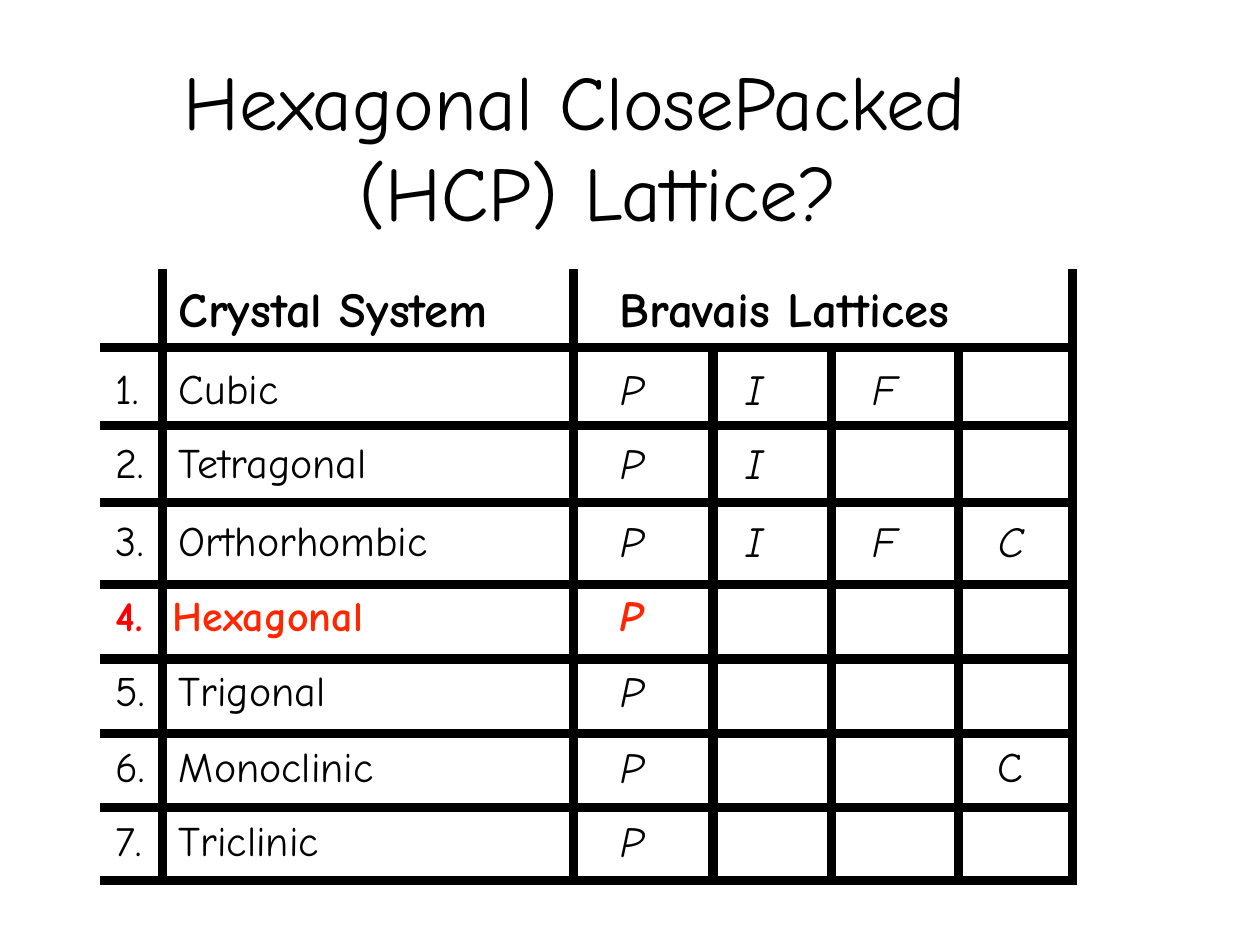
from lxml import etree
from pptx import Presentation
from pptx.dml.color import RGBColor
from pptx.oxml.ns import qn
from pptx.util import Inches, Pt

BLACK = RGBColor(0x00, 0x00, 0x00)
RED = RGBColor(0xFF, 0x00, 0x00)
ORANGE_RED = RGBColor(0xFF, 0x26, 0x00)
FONT = "Comic Neue"

COLUMN_WIDTHS = [0.49, 3.26, 1.11, 0.94, 1.01, 0.9]
ROW_HEIGHTS = [0.62, 0.62, 0.61, 0.65, 0.59, 0.59, 0.59, 0.58]
TOP_MARGINS = [0.11, 0.15, 0.12, 0.13, 0.07, 0.08, 0.09, 0.09]
TEXT_INDENTS = [0.12, 0.13, 0.37, 0.26, 0.32, 0.31]
LATTICE_COLUMNS = {"P": 2, "I": 3, "F": 4, "C": 5}
CRYSTAL_SYSTEMS = [
    ("Cubic", "PIF"),
    ("Tetragonal", "PI"),
    ("Orthorhombic", "PIFC"),
    ("Hexagonal", "P"),
    ("Trigonal", "P"),
    ("Monoclinic", "PC"),
    ("Triclinic", "P"),
]


def add_run(paragraph, text, size, color=BLACK, bold=False, italic=False):
    run = paragraph.add_run()
    run.text = text
    run.font.name = FONT
    run.font.size = Pt(size)
    run.font.bold = bold
    run.font.italic = italic
    run.font.color.rgb = color


def add_border(cell, side):
    """Draw a 6 pt black line on one side (L, R, T or B) of a cell."""
    properties = cell._tc.get_or_add_tcPr()
    line = etree.SubElement(properties, qn(f"a:ln{side}"), w=str(Pt(6)))
    fill = etree.SubElement(line, qn("a:solidFill"))
    etree.SubElement(fill, qn("a:srgbClr"), val=str(BLACK))


presentation = Presentation()
presentation.slide_width = Inches(10)
presentation.slide_height = Inches(7.5)
slide = presentation.slides.add_slide(presentation.slide_layouts[6])

# Title, with its second line indented
title = slide.shapes.add_textbox(Inches(1.45), Inches(0.39), Inches(6.77), Inches(1.48))
title_frame = title.text_frame
title_frame.word_wrap = True
title_frame.margin_left = title_frame.margin_right = title_frame.margin_bottom = 0
title_frame.margin_top = Inches(0.05)
title_paragraph = title_frame.paragraphs[0]
title_paragraph.line_spacing = Pt(52)
title_properties = title_paragraph._p.get_or_add_pPr()
title_properties.set("marL", str(Inches(1.4)))
title_properties.set("indent", str(Inches(-1.39)))
add_run(title_paragraph, "Hexagonal ClosePacked", 44)
title_paragraph.add_line_break()
add_run(title_paragraph, "(HCP) Lattice?", 44)

# Table grid: open at the top and on the left
table = slide.shapes.add_table(
    len(ROW_HEIGHTS), len(COLUMN_WIDTHS), Inches(0.8), Inches(2.14),
    Inches(sum(COLUMN_WIDTHS)), Inches(sum(ROW_HEIGHTS)),
).table
table.first_row = False
table.horz_banding = False
for column, width in zip(table.columns, COLUMN_WIDTHS):
    column.width = Inches(width)
for row, height in zip(table.rows, ROW_HEIGHTS):
    row.height = Inches(height)
table.cell(0, 2).merge(table.cell(0, 5))

for row_index, top_margin in enumerate(TOP_MARGINS):
    for column_index, indent in enumerate(TEXT_INDENTS):
        cell = table.cell(row_index, column_index)
        cell.margin_left = cell.margin_right = cell.margin_bottom = 0
        cell.margin_top = Inches(top_margin)
        if column_index > 0:
            add_border(cell, "L")
        add_border(cell, "R")
        if row_index > 0:
            add_border(cell, "T")
        add_border(cell, "B")
        cell.fill.background()
        paragraph_properties = cell.text_frame.paragraphs[0]._p.get_or_add_pPr()
        paragraph_properties.set("marL", str(Inches(indent)))

# Table text
for column_index, heading in [(1, "Crystal System"), (2, "Bravais Lattices")]:
    paragraph = table.cell(0, column_index).text_frame.paragraphs[0]
    add_run(paragraph, heading, 28, bold=True)

for number, (system, lattices) in enumerate(CRYSTAL_SYSTEMS, start=1):
    highlighted = system == "Hexagonal"
    number_color = RED if highlighted else BLACK
    color = ORANGE_RED if highlighted else BLACK
    number_paragraph, system_paragraph = (
        table.cell(number, column).text_frame.paragraphs[0] for column in (0, 1)
    )
    add_run(number_paragraph, f"{number}.", 24, number_color, highlighted)
    add_run(system_paragraph, system, 24, color, highlighted)
    if highlighted:
        system_paragraph._p.get_or_add_pPr().set("marL", str(Inches(0.08)))
    for lattice in lattices:
        paragraph = table.cell(number, LATTICE_COLUMNS[lattice]).text_frame.paragraphs[0]
        upright = system == "Monoclinic" and lattice == "C"
        size = 24 if upright else 24.5
        add_run(paragraph, lattice, size, color, highlighted, not upright)

presentation.save("out.pptx")
